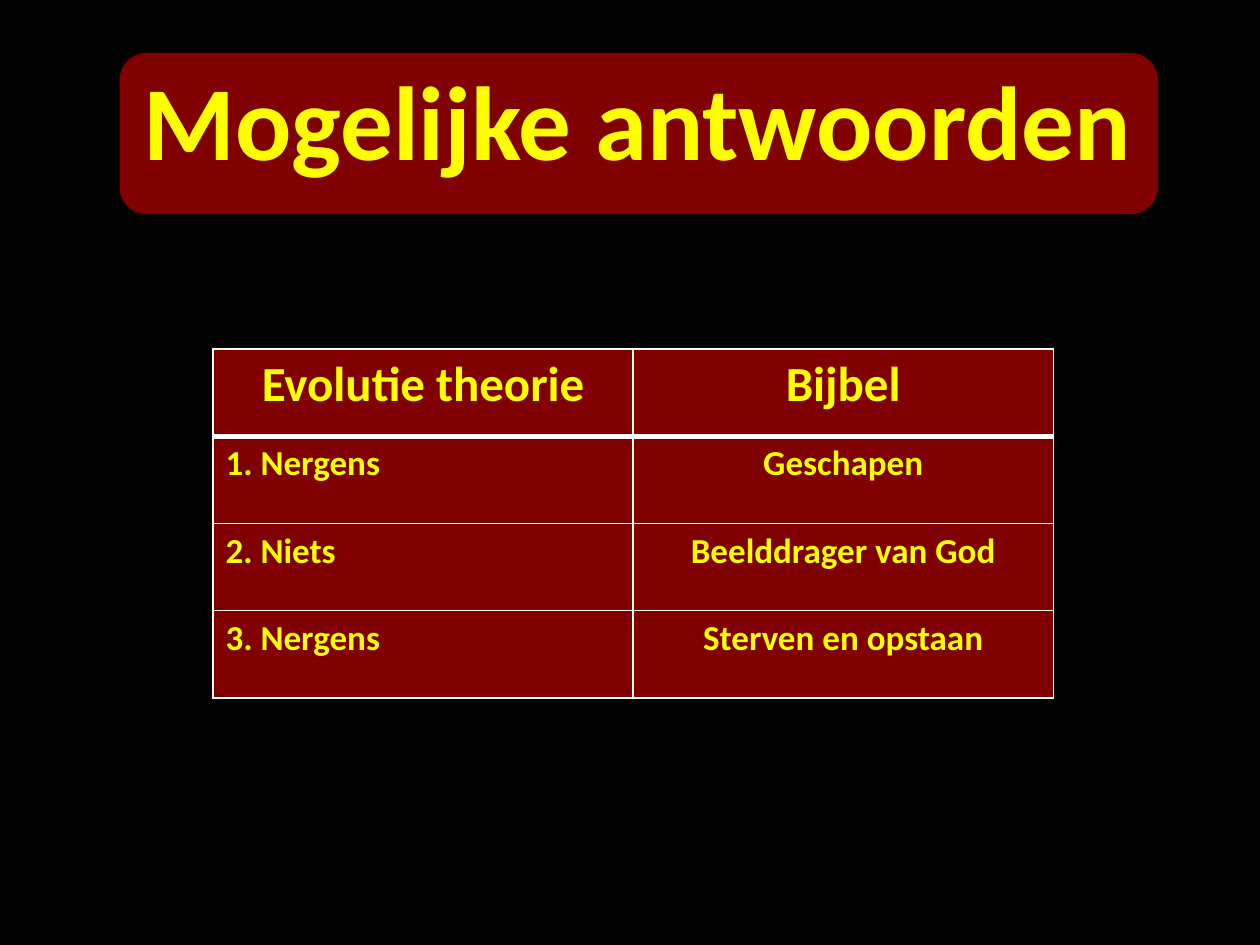
from lxml import etree
from pptx import Presentation
from pptx.dml.color import RGBColor
from pptx.enum.shapes import MSO_SHAPE
from pptx.enum.text import MSO_AUTO_SIZE, PP_ALIGN
from pptx.oxml.ns import qn
from pptx.util import Inches, Pt

ROUNDED = MSO_SHAPE.ROUNDED_RECTANGLE
FIT_SHAPE = MSO_AUTO_SIZE.SHAPE_TO_FIT_TEXT
LEFT, CENTER = PP_ALIGN.LEFT, PP_ALIGN.CENTER

COLORS = {"background": "000000", "panel": "800000", "text": "FFFF00", "border": "FFFFFF"}
FONT = {"name": "Calibri", "bold": True}
ANSWERS = [
    ("Evolutie theorie", "Bijbel"),
    ("1. Nergens", "Geschapen"),
    ("2. Niets", "Beelddrager van God"),
    ("3. Nergens", "Sterven en opstaan"),
]


def set_fill(fill, color):
    fill.solid()
    fill.fore_color.rgb = RGBColor.from_string(COLORS[color])


def write_text(frame, text, size, align=LEFT):
    para = frame.paragraphs[0]
    para.alignment = align
    span = para.add_run()
    span.text = text
    for name, value in {**FONT, "size": Pt(size)}.items():
        setattr(span.font, name, value)
    span.font.color.rgb = RGBColor.from_string(COLORS["text"])


def set_borders(cell, widths):
    """Draw the cell's borders; widths maps L, R, T and B to points."""
    properties = cell._tc.get_or_add_tcPr()
    for side, width in widths.items():
        line = etree.SubElement(properties, qn(f"a:ln{side}"), w=str(Pt(width)))
        solid = etree.SubElement(line, qn("a:solidFill"))
        etree.SubElement(solid, qn("a:srgbClr"), val=COLORS["border"])


def add_title(page, text):
    panel = page.shapes.add_shape(ROUNDED, Inches(0.95), Inches(0.42), Inches(8.24), Inches(1.28))
    panel.shadow.inherit = False
    set_fill(panel.fill, "panel")
    panel.line.fill.background()

    box = page.shapes.add_textbox(Inches(1.04), Inches(0.39), Inches(8.12), Inches(1.11))
    box.text_frame.word_wrap = False
    box.text_frame.auto_size = FIT_SHAPE
    write_text(box.text_frame, text, 60)


def add_answer_table(page, rows):
    frame = page.shapes.add_table(
        len(rows), len(rows[0]), Inches(1.69), Inches(2.77), Inches(6.67), Inches(2.77)
    )
    for row, texts in enumerate(rows):
        for column, text in enumerate(texts):
            cell = frame.table.cell(row, column)
            is_header = row == 0
            centered = is_header or column == 1
            write_text(cell.text_frame, text, 28 if is_header else 20, CENTER if centered else LEFT)
            set_borders(cell, {"L": 1, "R": 1, "T": 3 if row == 1 else 1, "B": 3 if is_header else 1})
            set_fill(cell.fill, "panel")


def main():
    deck = Presentation()
    deck.slide_width, deck.slide_height = Inches(10), Inches(7.5)
    page = deck.slides.add_slide(deck.slide_layouts[6])
    set_fill(page.background.fill, "background")
    add_title(page, "Mogelijke antwoorden")
    add_answer_table(page, ANSWERS)
    deck.save("out.pptx")


if __name__ == "__main__":
    main()
